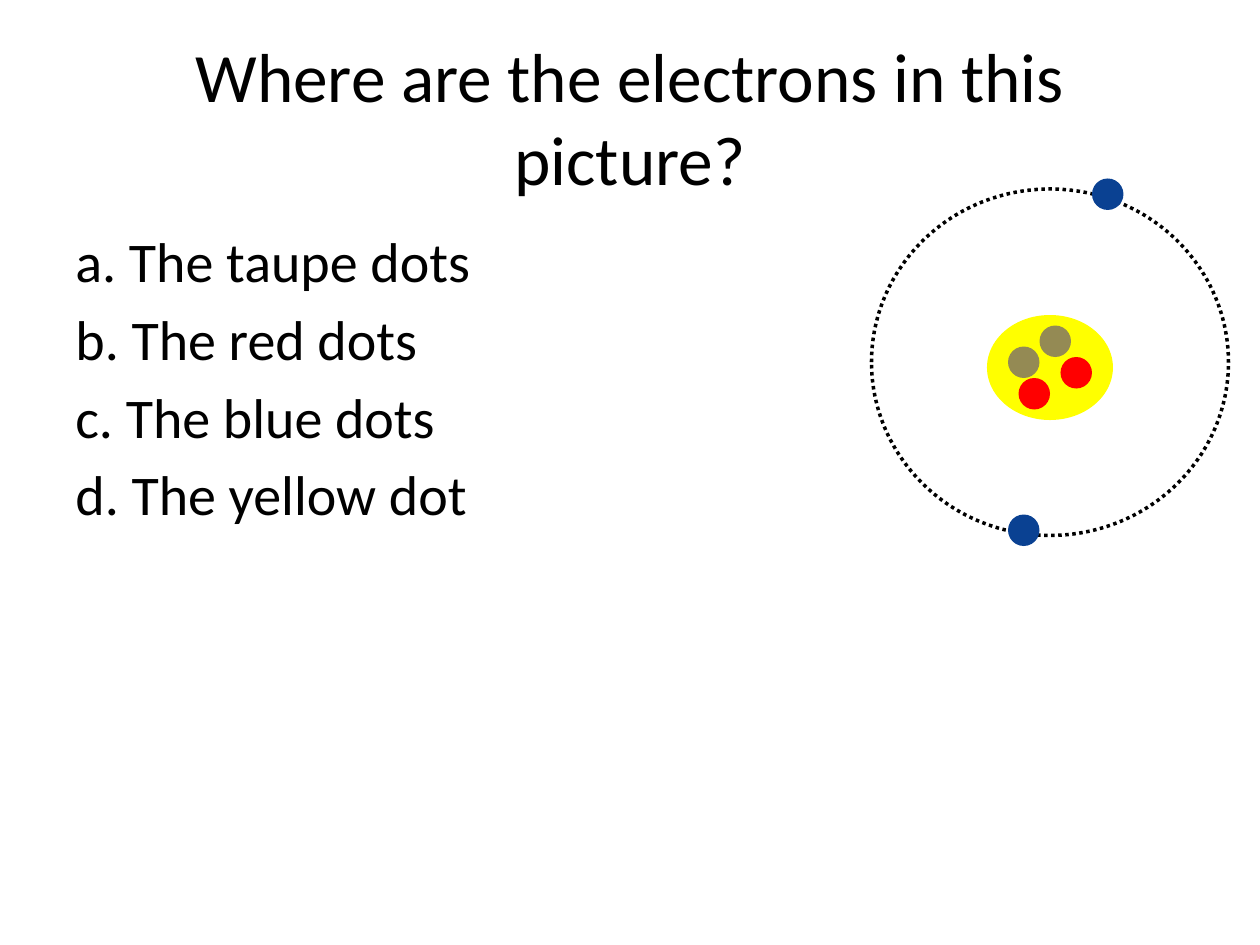
import collections
import pptx
import pptx.util
import pptx.dml.color
import pptx.enum.dml
import pptx.enum.shapes
import pptx.enum.text

Box = collections.namedtuple("Box", "column row columns rows")
CELL = pptx.util.Inches(1) // 12
Anchor = pptx.enum.text.MSO_ANCHOR
Align = pptx.enum.text.PP_ALIGN


class Theme:
    font = "Calibri"
    text = "000000"
    orbit = "000000"
    nucleus = "FFFF00"
    proton = "FF0000"
    neutron = "948A54"
    electron = "0A4192"
    title_size = pptx.util.Pt(39.6)
    answer_size = pptx.util.Pt(32)
    answer_gap = pptx.util.Pt(6)
    orbit_width = pptx.util.Pt(2)


def rgb(value):
    return pptx.dml.color.RGBColor.from_string(value)


def apply_format(target, values):
    for name, value in values.items():
        setattr(target, name, value)


def lengths(box):
    return [round(share * CELL) for share in box]


def add_text(page, box, lines, size, anchor, para_format, hanging=0):
    frame = page.shapes.add_textbox(*lengths(box)).text_frame
    apply_format(frame, {"word_wrap": True, "vertical_anchor": anchor})
    for index, line in enumerate(lines):
        para = frame.add_paragraph() if index else frame.paragraphs[0]
        if hanging:
            properties = para._p.get_or_add_pPr()
            properties.set("marL", str(hanging))
            properties.set("indent", str(-hanging))
        apply_format(para, para_format)
        if index:
            para.space_before = Theme.answer_gap
        span = para.add_run()
        span.text = line
        apply_format(span.font, {"name": Theme.font, "size": size})
        span.font.color.rgb = rgb(Theme.text)


def add_title(page, box):
    add_text(page, box, ["Where are the electrons in this picture?"],
             Theme.title_size, Anchor.MIDDLE, {"alignment": Align.CENTER})


def add_answers(page, box):
    choices = ["a. The taupe dots", "b. The red dots",
               "c. The blue dots", "d. The yellow dot"]
    add_text(page, box, choices, Theme.answer_size, Anchor.TOP,
             {"alignment": Align.LEFT}, pptx.util.Inches(0.38))


def add_ellipse(group, box, color=None):
    ellipse = group.shapes.add_shape(
        pptx.enum.shapes.MSO_SHAPE.OVAL, *lengths(box))
    ellipse.shadow.inherit = False
    if color:
        ellipse.fill.solid()
        ellipse.fill.fore_color.rgb = rgb(color)
        ellipse.line.fill.background()
    else:
        ellipse.fill.background()
        ellipse.line.color.rgb = rgb(Theme.orbit)
        apply_format(ellipse.line, {
            "width": Theme.orbit_width,
            "dash_style": pptx.enum.dml.MSO_LINE.ROUND_DOT})


def add_atom(page, box):
    atom = page.shapes.add_group_shape()
    add_ellipse(atom, Box(box.column, box.row + 1, box.columns, box.rows - 2))
    add_ellipse(atom, Box(box.column + 11, box.row + 13, 12, 10), Theme.nucleus)
    particles = [
        (14, 19, Theme.proton),
        (13, 16, Theme.neutron),
        (16, 14, Theme.neutron),
        (18, 17, Theme.proton),
        (13, 32, Theme.electron),
        (21, 0, Theme.electron),
    ]
    for column, row, color in particles:
        add_ellipse(atom, Box(box.column + column, box.row + row, 3, 3), color)


def main():
    deck = pptx.Presentation()
    apply_format(deck, {"slide_width": 120 * CELL, "slide_height": 90 * CELL})
    page = deck.slides.add_slide(deck.slide_layouts[6])
    add_title(page, Box(6, 3.6, 108, 15))
    add_atom(page, Box(83, 17, 34, 35))
    add_answers(page, Box(6, 21, 108, 59.4))
    deck.save("out.pptx")


if __name__ == "__main__":
    main()
